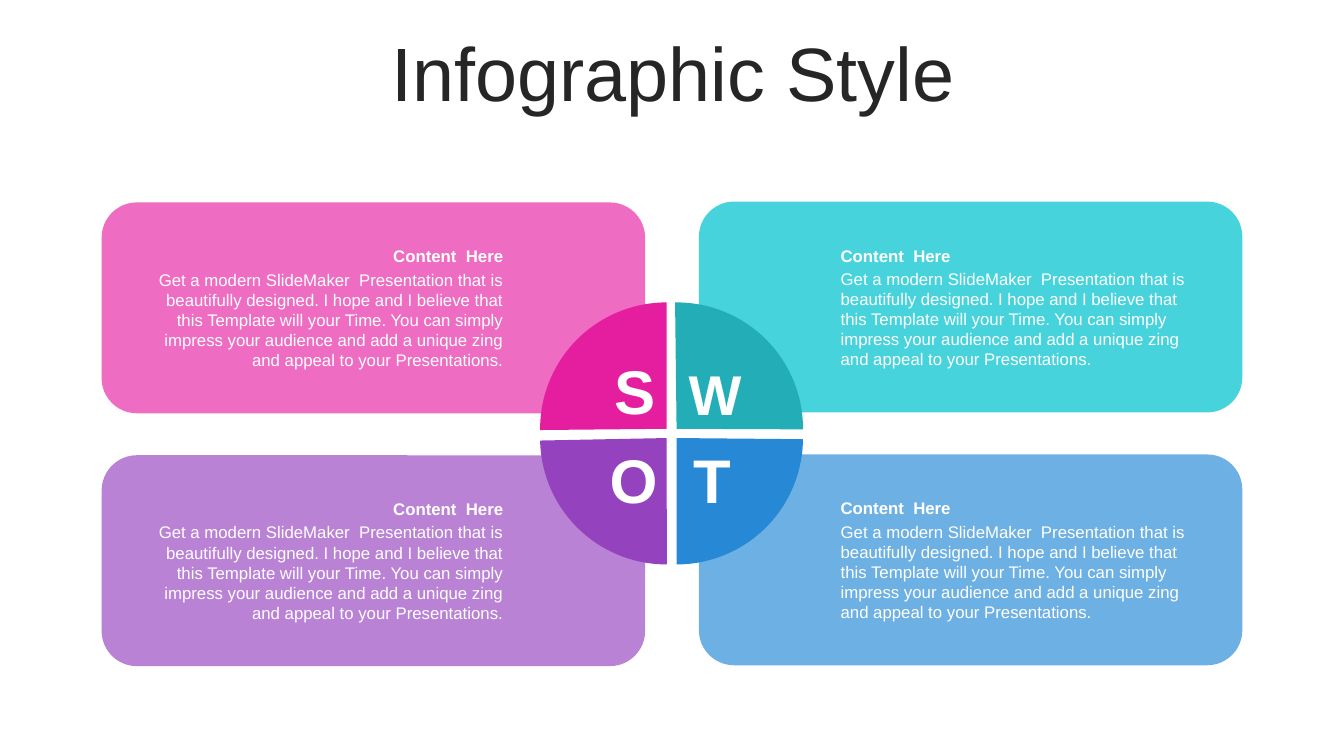
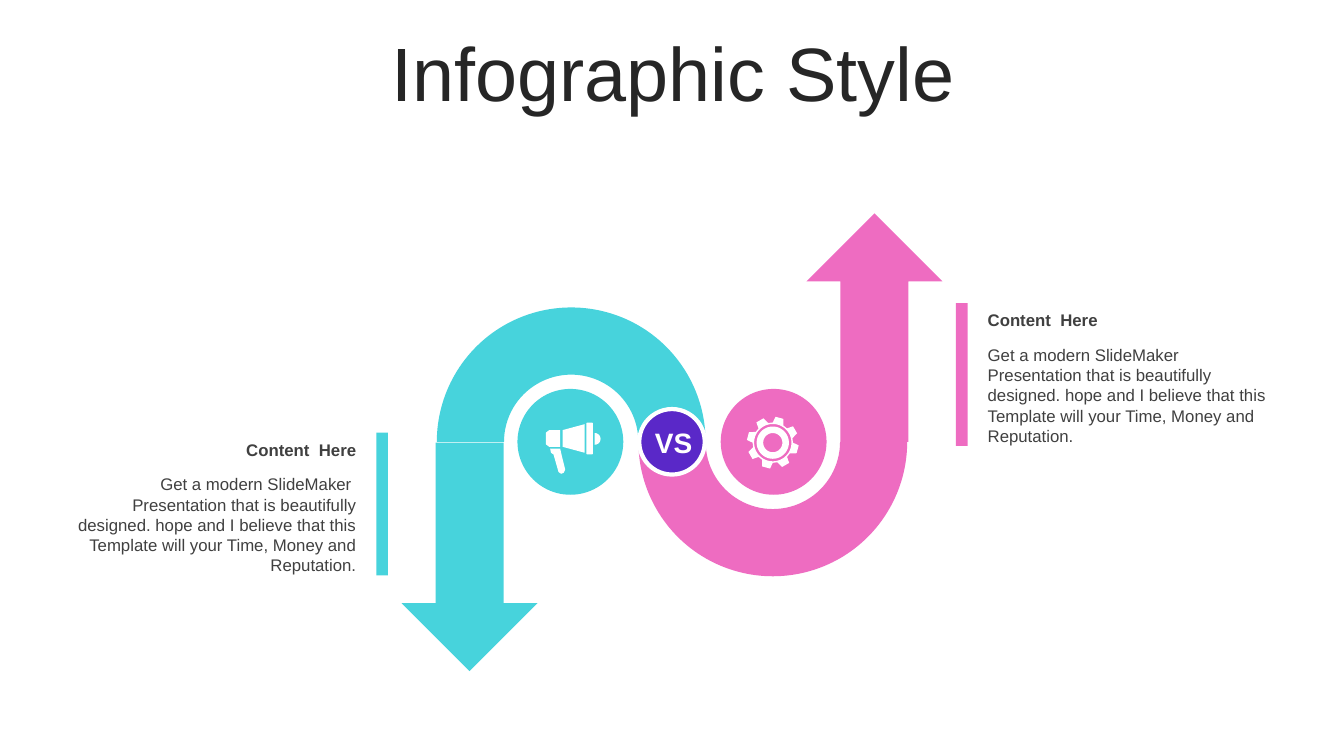
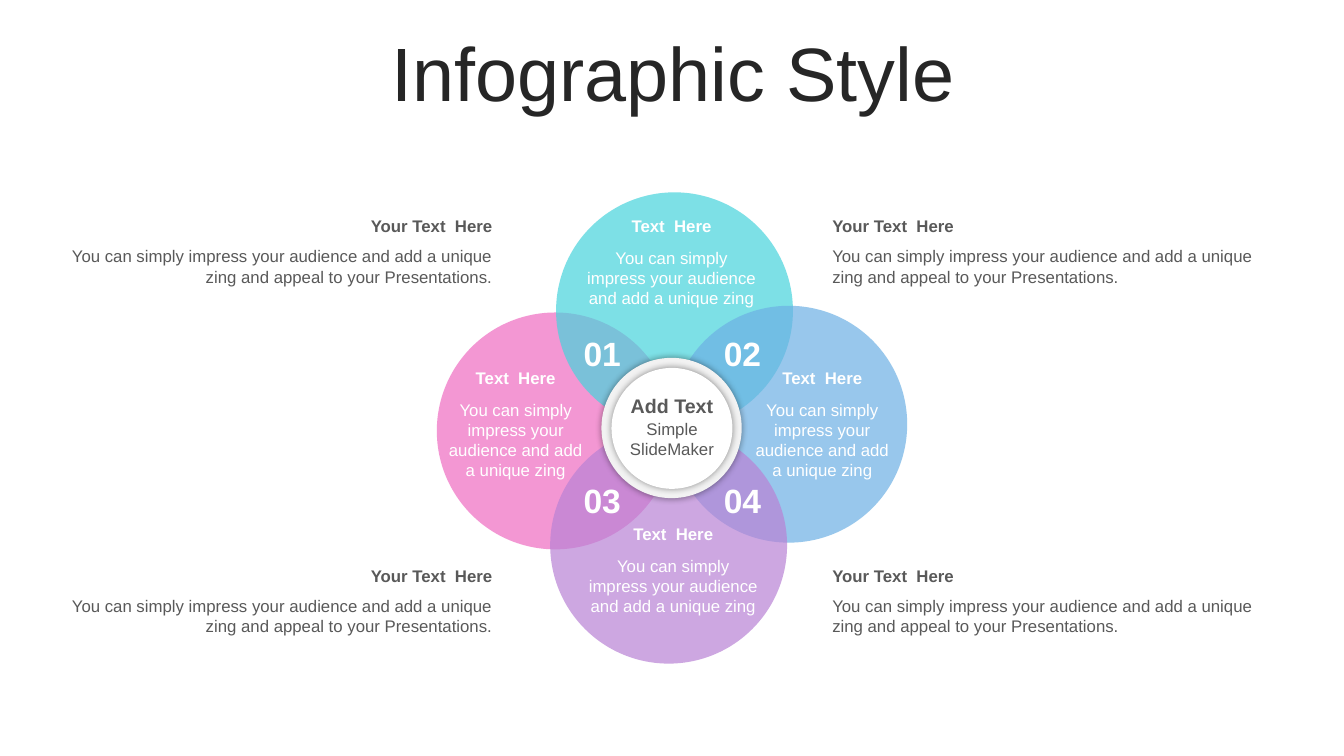
from itertools import product
from math import cos, radians, sin

from lxml.etree import SubElement
from pptx import Presentation
from pptx.dml.color import RGBColor
from pptx.enum.shapes import MSO_SHAPE
from pptx.enum.text import MSO_ANCHOR, PP_ALIGN
from pptx.oxml.ns import qn
from pptx.util import Inches, Pt

# The slide is a grid of square cells; every length below counts cells.
COLUMNS, ROWS = 160, 90
CELL = Inches(1 / 12)

FONT = "Arial"
HEADING_HEIGHT = 3.6
LEFT, CENTER, RIGHT = PP_ALIGN.LEFT, PP_ALIGN.CENTER, PP_ALIGN.RIGHT

WHITE = RGBColor(0xFF, 0xFF, 0xFF)
PALE_GRAY = RGBColor(0xF2, 0xF2, 0xF2)
TITLE_GRAY = RGBColor(0x26, 0x26, 0x26)
DARK_GRAY = RGBColor(0x40, 0x40, 0x40)
MID_GRAY = RGBColor(0x59, 0x59, 0x59)
PINK = RGBColor(0xEE, 0x6C, 0xC1)
TURQUOISE = RGBColor(0x47, 0xD3, 0xDC)
PURPLE = RGBColor(0xB9, 0x82, 0xD5)
BLUE = RGBColor(0x6D, 0xB0, 0xE4)
DEEP_PINK = RGBColor(0xE5, 0x1E, 0xA0)
DEEP_TURQUOISE = RGBColor(0x23, 0xAE, 0xB7)
DEEP_PURPLE = RGBColor(0x95, 0x42, 0xBF)
DEEP_BLUE = RGBColor(0x27, 0x89, 0xD5)
VIOLET = RGBColor(0x5A, 0x28, 0xC8)


def add_figure(slide, kind, left, top, width, height, color, mirrored=False):
    """Add a plain preset shape; mirrored counts left from the right edge."""
    if mirrored:
        left = COLUMNS - left - width
    box = [round(length * CELL) for length in (left, top, width, height)]
    shape = slide.shapes.add_shape(kind, *box)
    shape.shadow.inherit = False
    shape.fill.solid()
    shape.fill.fore_color.rgb = color
    shape.line.fill.background()
    return shape


def add_text(slide, left, top, width, height, text, color,
             size=12, bold=False, align=CENTER, mirrored=False):
    """Add a one-paragraph text box; mirrored counts left from the right edge."""
    if mirrored:
        left = COLUMNS - left - width
    box = [round(length * CELL) for length in (left, top, width, height)]
    frame = slide.shapes.add_textbox(*box).text_frame
    frame.word_wrap = True
    frame.vertical_anchor = MSO_ANCHOR.MIDDLE
    paragraph = frame.paragraphs[0]
    paragraph.alignment = align
    run = paragraph.add_run()
    run.text = text
    run.font.name = FONT
    run.font.size = Pt(size)
    run.font.bold = bold
    run.font.color.rgb = color
    return paragraph


presentation = Presentation()
presentation.slide_width = COLUMNS * CELL
presentation.slide_height = ROWS * CELL
blank_layout = presentation.slide_layouts[6]

slides = [presentation.slides.add_slide(blank_layout) for _ in range(3)]
for slide in slides:
    title = add_text(slide, 4.2, 4.4, 151.9, 9.5, "Infographic Style", TITLE_GRAY, 54)
    title.line_spacing = 0.9
swot_slide, versus_slide, petal_slide = slides

# SWOT: four cards, the right pair mirroring the left pair
CARD_LEFT, CARD_WIDTH, CARD_HEIGHT = 12.1, 64.7, 25.1
CARD_TEXT_LEFT, CARD_TEXT_WIDTH, CARD_TEXT_HEIGHT = 16, 45.1, 13.3
card_text = (
    "Get a modern SlideMaker  Presentation that is beautifully designed. "
    "I hope and I believe that this Template will your Time. You can simply "
    "impress your audience and add a unique zing and appeal to your Presentations."
)
cards = [(False, 24.1, PINK), (False, 54.2, PURPLE),
         (True, 24, TURQUOISE), (True, 54.1, BLUE)]
for mirrored, top, color in cards:
    align = LEFT if mirrored else RIGHT
    add_figure(swot_slide, MSO_SHAPE.ROUNDED_RECTANGLE, CARD_LEFT, top,
               CARD_WIDTH, CARD_HEIGHT, color, mirrored)
    add_text(swot_slide, CARD_TEXT_LEFT, top + 4.6, CARD_TEXT_WIDTH, HEADING_HEIGHT,
             "Content  Here", WHITE, bold=True, align=align, mirrored=mirrored)
    add_text(swot_slide, CARD_TEXT_LEFT, top + 7.3, CARD_TEXT_WIDTH, CARD_TEXT_HEIGHT,
             card_text, WHITE, align=align, mirrored=mirrored)

# SWOT: the divided circle, each quarter running clockwise from start to end
QUARTER_SIZE = 30.1
QUARTER_LEFTS, QUARTER_TOPS = (64.3, 65.5), (36, 37.1)
ADJUSTMENT_PER_DEGREE = 0.6
quarters = [(179.45, 270, DEEP_PINK), (89.8, 178.86, DEEP_PURPLE),
            (269.31, 0.25, DEEP_TURQUOISE), (0.53, 89.96, DEEP_BLUE)]
for (left, top), (start, end, color) in zip(product(QUARTER_LEFTS, QUARTER_TOPS), quarters):
    quarter = add_figure(swot_slide, MSO_SHAPE.PIE, left, top,
                         QUARTER_SIZE, QUARTER_SIZE, color)
    quarter.adjustments[0] = start * ADJUSTMENT_PER_DEGREE
    quarter.adjustments[1] = end * ADJUSTMENT_PER_DEGREE

letters = [("S", 71.6, 42, 44), ("W", 80.8, 42.3, 40),
           ("O", 71.4, 52.6, 44), ("T", 80.8, 52.6, 44)]
for letter, left, top, size in letters:
    add_text(swot_slide, left, top, 7.9, 8.9, letter, WHITE, size, bold=True)

# Versus: a bent arrow, a disc and a caption on each side
ARC_LEFT, ARC_TOP, ARC_SIZE = 52, 36.6, 32
ARROW_LEFT, ARROW_WIDTH, ARROW_HEIGHT = 47.8, 16.2, 27.2
DISC_LEFT, DISC_TOP, DISC_SIZE = 61.6, 46.3, 12.6
BAR_LEFT, BAR_WIDTH, BAR_HEIGHT = 44.8, 1.4, 17
CAPTION_LEFT, CAPTION_WIDTH, CAPTION_HEIGHT = 7.5, 36.1, 13.3
caption_text = (
    "Get a modern SlideMaker  Presentation that is beautifully designed. "
    "hope and I believe that this Template will your Time, Money and Reputation."
)
versus_sides = [(False, TURQUOISE, 52.7, 51.5), (True, PINK, 25.4, 36.1)]
for mirrored, color, arrow_top, bar_top in versus_sides:
    align = LEFT if mirrored else RIGHT
    arc = add_figure(versus_slide, MSO_SHAPE.BLOCK_ARC, ARC_LEFT, ARC_TOP,
                     ARC_SIZE, ARC_SIZE, color, mirrored)
    arc.rotation = 180 if mirrored else 0
    arrow = add_figure(versus_slide, MSO_SHAPE.UP_ARROW, ARROW_LEFT, arrow_top,
                       ARROW_WIDTH, ARROW_HEIGHT, color, mirrored)
    arrow.rotation = 0 if mirrored else 180
    add_figure(versus_slide, MSO_SHAPE.OVAL, DISC_LEFT, DISC_TOP,
               DISC_SIZE, DISC_SIZE, color, mirrored)
    add_figure(versus_slide, MSO_SHAPE.RECTANGLE, BAR_LEFT, bar_top,
               BAR_WIDTH, BAR_HEIGHT, color, mirrored)
    add_text(versus_slide, CAPTION_LEFT, bar_top + 0.2, CAPTION_WIDTH, HEADING_HEIGHT,
             "Content  Here", DARK_GRAY, bold=True, align=align, mirrored=mirrored)
    add_text(versus_slide, CAPTION_LEFT, bar_top + 4.3, CAPTION_WIDTH, CAPTION_HEIGHT,
             caption_text, DARK_GRAY, align=align, mirrored=mirrored)

badge = add_figure(versus_slide, MSO_SHAPE.OVAL, 76.1, 48.7, 7.8, 7.8, VIOLET)
badge.line.color.rgb = WHITE
badge.line.width = Pt(3)
add_text(versus_slide, 76, 50, 8.4, 5.3, "VS", WHITE, 20, bold=True)

# Icons: outlines are lists of points; round ones start as (angle, radius) pairs
handle = [(66.7, 53.4), (66.8, 53.9), (67.3, 55.9), (67.1, 56.3), (66.8, 56.4),
          (66.5, 56.2), (65.9, 54.1), (65.6, 53.9), (65.5, 53.4)]
grip = [(65.4, 51.2), (66.7, 51.2), (66.7, 53.2), (65.4, 53.2), (65, 52.9), (65, 51.5)]
horn = [(69.6, 50.5), (69.6, 53.9), (67, 53.2), (67, 51.2)]
rim = [(69.9, 50.3), (70.5, 50.3), (70.6, 50.4), (70.6, 54),
       (70.5, 54.1), (69.9, 54.1), (69.8, 54), (69.8, 50.4)]
megaphone = [handle, grip, horn, rim]
gear = []

DOME_CENTER, GEAR_CENTER = (70.8, 52.25), (92, 52.7)
dome = [(angle, 0.7) for angle in range(-90, 91, 10)]
tooth = [(0, 2.4), (6, 3.1), (24, 3.1), (32, 2.4)]
teeth = [(start + turn, radius) for start in range(-90, 270, 45) for turn, radius in tooth]
rings = [[(angle, radius) for angle in range(0, 360, 5)] for radius in (2.22, 1.92, 1.14)]

round_outlines = [(megaphone, DOME_CENTER, dome)]
round_outlines += [(gear, GEAR_CENTER, outline) for outline in [teeth, *rings]]
for icon_outlines, (center_x, center_y), outline in round_outlines:
    icon_outlines.append([
        (center_x + radius * cos(radians(angle)), center_y + radius * sin(radians(angle)))
        for angle, radius in outline
    ])

for icon_outlines in (megaphone, gear):
    first_x, first_y = icon_outlines[0][0]
    builder = versus_slide.shapes.build_freeform(first_x * CELL, first_y * CELL)
    for outline in icon_outlines:
        start, *others = [(x * CELL, y * CELL) for x, y in outline]
        builder.move_to(*start)
        builder.add_line_segments(others, close=True)
    icon = builder.convert_to_shape()
    icon.shadow.inherit = False
    icon.fill.solid()
    icon.fill.fore_color.rgb = WHITE
    icon.line.fill.background()

# Petals: four translucent circles, each with its own text
PETAL_SIZE = 28.2
petals = [(52, 37.2, PINK), (66.2, 22.9, TURQUOISE),
          (79.8, 36.4, BLUE), (65.5, 50.8, PURPLE)]
for left, top, color in petals:
    petal = add_figure(petal_slide, MSO_SHAPE.OVAL, left, top, PETAL_SIZE, PETAL_SIZE, color)
    fill_color = petal.element.spPr.find(qn("a:solidFill")).find(qn("a:srgbClr"))
    SubElement(fill_color, qn("a:alpha"), val="70000")

pitch = "You can simply impress your audience and add a unique zing"
petal_texts = [(51.7, 43.2, 19.4, 10.9), (68.6, 25.1, 22.7, 8.5),
               (88.2, 43.2, 19.4, 10.9), (68.8, 61.8, 22.7, 8.5)]
for left, top, width, height in petal_texts:
    add_text(petal_slide, left, top, width, HEADING_HEIGHT, "Text  Here", WHITE, bold=True)
    add_text(petal_slide, left, top + 3.7, width, height, pitch, WHITE)

# Petals: the raised hub and the numbers around it
hub_discs = [(71.6, 42.6, 16.7, PALE_GRAY), (72.8, 43.8, 14.4, WHITE)]
for left, top, size, color in hub_discs:
    disc = add_figure(petal_slide, MSO_SHAPE.OVAL, left, top, size, size, color)
    effects = disc.element.spPr.find(qn("a:effectLst"))
    shadow = SubElement(effects, qn("a:outerShdw"), blurRad=str(Pt(5)), dist="0", dir="0")
    shadow_color = SubElement(shadow, qn("a:srgbClr"), val="000000")
    SubElement(shadow_color, qn("a:alpha"), val="40000")
add_text(petal_slide, 73.1, 46.3, 13.8, 4.1, "Add Text", MID_GRAY, 14, bold=True)
add_text(petal_slide, 73.1, 49.2, 13.8, 6, "Simple SlideMaker", MID_GRAY)

NUMBER_TOPS, NUMBER_LEFTS = (39, 56.5), (67.75, 84.45)
for number, (top, left) in enumerate(product(NUMBER_TOPS, NUMBER_LEFTS), start=1):
    add_text(petal_slide, left, top, 7.9, 6, f"{number:02}", WHITE, 24, bold=True)

# Petals: a caption in each corner
CORNER_WIDTH, CORNER_HEIGHT = 54.4, 6
corner_sides = [(5.4, RIGHT), (97.9, LEFT)]
corner_tops = (25.1, 66.7)
for (left, align), top in product(corner_sides, corner_tops):
    add_text(petal_slide, left, top, CORNER_WIDTH, HEADING_HEIGHT,
             "Your Text  Here", MID_GRAY, bold=True, align=align)
    add_text(petal_slide, left, top + 3.6, CORNER_WIDTH, CORNER_HEIGHT,
             f"{pitch} and appeal to your Presentations.", MID_GRAY, align=align)

presentation.save("out.pptx")
